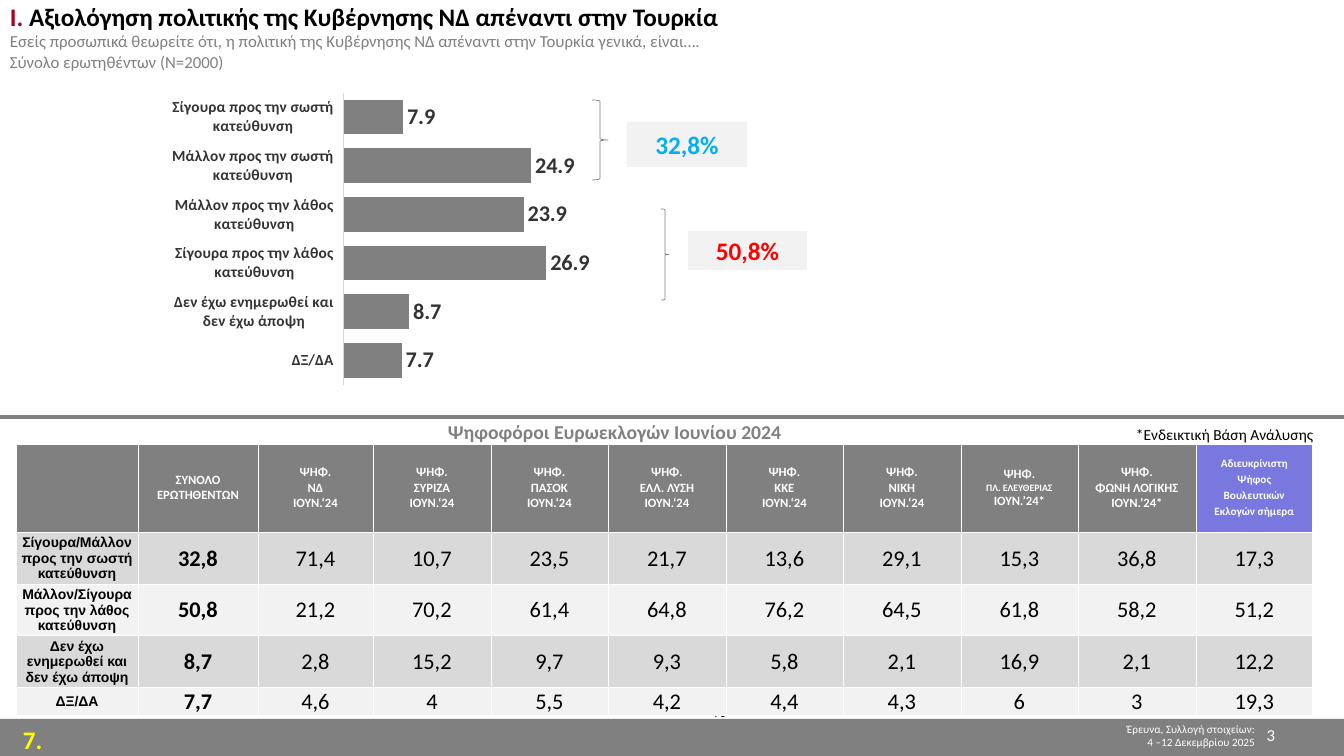
"""Builds the poll slide on foreign policy: bar chart, braces and voter table."""
from lxml import etree
from pptx import Presentation
from pptx.chart.data import CategoryChartData
from pptx.dml.color import RGBColor
from pptx.enum.chart import XL_CHART_TYPE, XL_LABEL_POSITION, XL_TICK_LABEL_POSITION, XL_TICK_MARK
from pptx.enum.shapes import MSO_CONNECTOR, MSO_SHAPE
from pptx.enum.text import MSO_ANCHOR, PP_ALIGN
from pptx.oxml import parse_xml
from pptx.oxml.ns import nsdecls, qn
from pptx.util import Emu, Pt

LEFT, CENTER, RIGHT = PP_ALIGN.LEFT, PP_ALIGN.CENTER, PP_ALIGN.RIGHT
TOP, MIDDLE = MSO_ANCHOR.TOP, MSO_ANCHOR.MIDDLE
RECTANGLE, BRACE = MSO_SHAPE.RECTANGLE, MSO_SHAPE.RIGHT_BRACE
BAR, STRAIGHT = XL_CHART_TYPE.BAR_CLUSTERED, MSO_CONNECTOR.STRAIGHT
OUTSIDE_END, NO_TICK = XL_LABEL_POSITION.OUTSIDE_END, XL_TICK_MARK.NONE
LABELS_LOW = XL_TICK_LABEL_POSITION.LOW

WHITE = RGBColor(0xFF, 0xFF, 0xFF)
BLACK = RGBColor(0x00, 0x00, 0x00)
GRAY = RGBColor(0x80, 0x80, 0x80)
DARK = RGBColor(0x33, 0x33, 0x33)
SILVER = RGBColor(0xD9, 0xD9, 0xD9)
PALE = RGBColor(0xF2, 0xF2, 0xF2)
CRIMSON = RGBColor(0xA5, 0x00, 0x21)
YELLOW = RGBColor(0xFF, 0xFF, 0x00)
BLUE = RGBColor(0x00, 0xB0, 0xF0)
RED = RGBColor(0xFF, 0x00, 0x00)
VIOLET = RGBColor(0x78, 0x78, 0xDE)
SCALE = 914400 / 100.8


def px(*lengths):
    return [Emu(round(length * SCALE)) for length in lengths]


def write(frame, lines, align=LEFT, anchor=TOP, wrap=True, name="Calibri", gap=0):
    frame.word_wrap = wrap
    frame.vertical_anchor = anchor
    for index, spans in enumerate(lines):
        para = frame.paragraphs[0] if index == 0 else frame.add_paragraph()
        para.alignment = align
        if index and gap:
            para.space_before = Pt(gap)
        for text, size, color, bold in spans:
            span = para.add_run()
            span.text = text
            for key, value in {"name": name, "size": Pt(size), "bold": bold}.items():
                setattr(span.font, key, value)
            span.font.color.rgb = color


deck = Presentation()
deck.slide_width, deck.slide_height = px(1344, 756)
page = deck.slides.add_slide(deck.slide_layouts[6])
shapes = page.shapes

title = [
    [("Ι. ", 18, CRIMSON, True),
     ("Αξιολόγηση πολιτικής της Κυβέρνησης ΝΔ απέναντι στην Τουρκία", 18, BLACK, True)],
    [("Εσείς προσωπικά θεωρείτε ότι, η πολιτική της Κυβέρνησης ΝΔ απέναντι στην "
      "Τουρκία γενικά, είναι….", 12, GRAY, False)],
    [("Σύνολο ερωτηθέντων (Ν=2000)", 12, GRAY, False)],
]
panels = [
    ((0, 719, 1344, 37), GRAY, [], LEFT, TOP, True),
    ((0, -4, 1217, 92), WHITE, title, LEFT, TOP, True),
    ((627, 122, 120, 45), PALE, [[("32,8%", 18, BLUE, True)]], CENTER, MIDDLE, False),
    ((688, 231, 119, 39), PALE, [[("50,8%", 18, RED, True)]], CENTER, MIDDLE, False),
]
for place, color, lines, align, anchor, wrap in panels:
    panel = shapes.add_shape(RECTANGLE, *px(*place))
    panel.shadow.inherit = False
    panel.fill.solid()
    panel.fill.fore_color.rgb = color
    panel.line.fill.background()
    write(panel.text_frame, lines, align, anchor, wrap)

notes = [
    ((974, 717, 291, 37), [[("Έρευνα, Συλλογή στοιχείων:", 8, WHITE, False)],
                           [("4 –12 Δεκεμβρίου 2025", 8, WHITE, False)]], RIGHT, True),
    ((13, 719, 68, 40), [[("7.", 18, YELLOW, True)]], LEFT, True),
    ((704, 696, 32, 30), [[("%", 12, BLACK, False)]], LEFT, False),
    ((1005, 720, 280, 36), [[("3", 12, WHITE, False)]], RIGHT, True),
    ((438, 415, 664, 34), [[("Ψηφοφόροι Ευρωεκλογών Ιουνίου 2024", 14, GRAY, True)]], LEFT, True),
    ((1126, 420, 203, 29), [[("*Ενδεικτική Βάση Ανάλυσης", 11, BLACK, False)]], LEFT, False),
]
for place, lines, align, wrap in notes:
    box = shapes.add_textbox(*px(*place))
    write(box.text_frame, lines, align, TOP, wrap)

data = CategoryChartData(number_format="0.0")
data.categories = [
    "Σίγουρα προς την σωστή κατεύθυνση", "Μάλλον προς την σωστή κατεύθυνση",
    "Μάλλον προς την λάθος κατεύθυνση", "Σίγουρα προς την λάθος κατεύθυνση",
    "Δεν έχω ενημερωθεί και δεν έχω άποψη", "ΔΞ/ΔΑ",
]
data.add_series("Series 1", [7.9, 24.9, 23.9, 26.9, 8.7, 7.7])
chart = shapes.add_chart(BAR, *px(172, 60, 984, 365), data).chart
chart.has_legend = chart.has_title = False
plot = chart.plots[0]
for key, value in {"gap_width": 40, "overlap": -51, "vary_by_categories": False,
                   "has_data_labels": True}.items():
    setattr(plot, key, value)
labels = plot.data_labels
for key, value in {"show_value": True, "position": OUTSIDE_END, "number_format": "0.0",
                   "number_format_is_linked": False}.items():
    setattr(labels, key, value)
bars = plot.series[0].format.fill
bars.solid()
bars.fore_color.rgb = GRAY
categories, values = chart.category_axis, chart.value_axis
for key, value in {"reverse_order": True, "major_tick_mark": NO_TICK, "minor_tick_mark": NO_TICK,
                   "tick_label_position": LABELS_LOW, "has_major_gridlines": False}.items():
    setattr(categories, key, value)
categories.format.line.color.rgb = SILVER
categories.format.line.width = Pt(0.75)
for key, value in {"minimum_scale": 0, "maximum_scale": 100, "major_unit": 20,
                   "has_major_gridlines": False, "visible": False}.items():
    setattr(values, key, value)
for font, size, color in [(chart.font, 14, BLACK), (labels.font, 16, DARK),
                          (categories.tick_labels.font, 11, DARK)]:
    for key, value in {"name": "Calibri", "size": Pt(size), "bold": True}.items():
        setattr(font, key, value)
    font.color.rgb = color
area = chart.element.find(".//" + qn("c:plotArea"))
for old in area.findall(qn("c:layout")):
    area.remove(old)
layout = parse_xml(f"<c:layout {nsdecls('c')}><c:manualLayout/></c:layout>")
for tag, value in [("layoutTarget", "inner"), ("xMode", "edge"), ("yMode", "edge"),
                   ("x", "0.17"), ("y", "0.09"), ("w", "0.77"), ("h", "0.8")]:
    etree.SubElement(layout[0], qn("c:" + tag)).set("val", value)
area.insert(0, layout)

for place in [(592, 100, 16, 80), (661, 209, 8, 91)]:
    brace = shapes.add_shape(BRACE, *px(*place))
    brace.shadow.inherit = False
    brace.fill.background()
    brace.line.color.rgb = GRAY
    brace.line.width = Pt(0.5)

divider = shapes.add_connector(STRAIGHT, *px(0, 417, 1344, 417))
divider.line.color.rgb = GRAY
divider.line.width = Pt(2.25)
etree.SubElement(divider.element.spPr, qn("a:effectLst"))

parties = ["NΔ", "ΣΥΡΙΖΑ", "ΠΑΣΟΚ", "ΕΛΛ. ΛΥΣΗ", "ΚΚΕ", "ΝΙΚΗ", "ΠΛ. ΕΛΕΥΘΕΡΙΑΣ", "ΦΩΝΗ ΛΟΓΙΚΗΣ"]
dates = ["ΙΟΥΝ.‘24"] * 6 + ["ΙΟΥΝ.’24*"] * 2
heads = [[], ["ΣΥΝΟΛΟ", "ΕΡΩΤΗΘΕΝΤΩΝ"]]
heads += [["ΨΗΦ.", party, date] for party, date in zip(parties, dates)]
heads.append(["Αδιευκρίνιστη", "Ψήφος", "Βουλευτικών", "Εκλογών σήμερα"])
rows = [
    heads,
    ["Σίγουρα/Μάλλον προς την σωστή κατεύθυνση",
     *"32,8 71,4 10,7 23,5 21,7 13,6 29,1 15,3 36,8 17,3".split()],
    ["Μάλλον/Σίγουρα προς την λάθος κατεύθυνση",
     *"50,8 21,2 70,2 61,4 64,8 76,2 64,5 61,8 58,2 51,2".split()],
    ["Δεν έχω ενημερωθεί και δεν έχω άποψη",
     *"8,7 2,8 15,2 9,7 9,3 5,8 2,1 16,9 2,1 12,2".split()],
    ["ΔΞ/ΔΑ", *"7,7 4,6 4 5,5 4,2 4,4 4,3 6 3 19,3".split()],
]
widths = [122, 120, 115] + [118, 117] * 4
heights = [88, 52, 51, 52, 28]
table = shapes.add_table(len(rows), len(widths),
                         *px(16, 444, sum(widths), sum(heights))).table
for column, width in zip(table.columns, px(*widths)):
    column.width = width
for row, height in zip(table.rows, px(*heights)):
    row.height = height
last = len(widths) - 1
for r, row in enumerate(rows):
    for c, content in enumerate(row):
        cell = table.cell(r, c)
        for side in ("L", "R", "T", "B"):
            cell._tc.get_or_add_tcPr().append(parse_xml(
                f'<a:ln{side} {nsdecls("a")} w="6350"><a:solidFill>'
                f'<a:srgbClr val="{WHITE}"/></a:solidFill></a:ln{side}>'))
        cell.fill.solid()
        cell.vertical_anchor = MIDDLE
        if r == 0:
            cell.fill.fore_color.rgb = VIOLET if c == last else GRAY
            sizes = {"ΠΛ. ΕΛΕΥΘΕΡΙΑΣ": 7}
            lines = [[(text, sizes.get(text, 8 if c == last else 9), WHITE, True)]
                     for text in content]
            write(cell.text_frame, lines, CENTER, MIDDLE, gap=1.6 if c == last else 0)
            continue
        cell.fill.fore_color.rgb = SILVER if r % 2 else PALE
        cell.margin_left, cell.margin_right, cell.margin_top, cell.margin_bottom = px(1, 1, 1, 0)
        write(cell.text_frame, [[(content, 16 if c else 10, BLACK, c < 2)]], CENTER, MIDDLE,
              name="Calibri" if c else "Arial")

deck.save("out.pptx")
